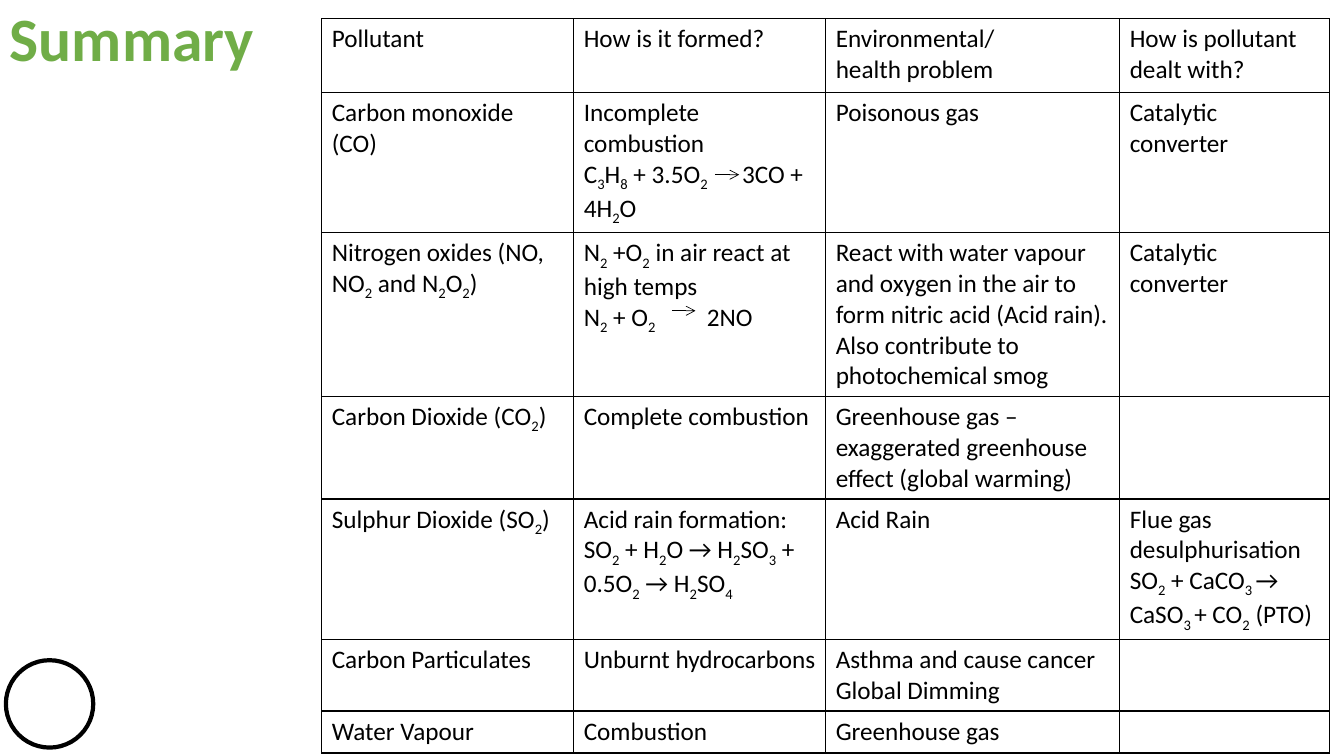
from dataclasses import dataclass

from lxml.etree import SubElement
from pptx import Presentation
from pptx.dml.color import RGBColor
from pptx.enum.shapes import MSO_CONNECTOR, MSO_SHAPE
from pptx.enum.text import MSO_ANCHOR
from pptx.oxml.ns import qn
from pptx.util import Emu, Inches, Pt

INK = {"black": "000000", "white": "FFFFFF", "green": "70AD47"}
FONT = "Calibri"
WIDE, HIGH = Inches(13.33), Inches(7.5)
COLS, ROWS = 160, 90
SPANS = (30, 30, 35, 25)
DEPTHS = (8.76, 16.7, 19.5, 12.15, 16.7, 8.55, 5)


@dataclass
class Box:
    left: float
    top: float
    width: float
    height: float

    def place(self) -> tuple:
        """Give the box as slide lengths."""
        return across(self.left), down(self.top), across(self.width), down(self.height)


@dataclass
class Line:
    text: str
    tab: float = 0


@dataclass
class Arrow:
    start: float
    end: float
    row: float


CELLS = (
    (("Pollutant",), ("How is it formed?",),
     ("Environmental/", "health problem"), ("How is pollutant dealt with?",)),
    (("Carbon monoxide (CO)",),
     ("Incomplete combustion", Line("C|3|H|8| + 3.5O|2|\t3CO + 4H|2|O", 18.85)),
     ("Poisonous gas",), ("Catalytic converter",)),
    (("Nitrogen oxides (NO, NO|2| and N|2|O|2|)",),
     ("N|2| +O|2| in air react at high temps", Line("N|2| + O|2|\t2NO", 14.65)),
     ("React with water vapour and oxygen in the air to form nitric acid "
      "(Acid rain). Also contribute to photochemical smog",),
     ("Catalytic converter",)),
    (("Carbon Dioxide (CO|2|)",), ("Complete combustion",),
     ("Greenhouse gas – exaggerated greenhouse effect (global warming)",), ()),
    (("Sulphur Dioxide (SO|2|)",),
     ("Acid rain formation: SO|2| + H|2|O → H|2|SO|3| + 0.5O|2| → H|2|SO|4|",),
     ("Acid Rain",),
     ("Flue gas desulphurisation", "SO|2| + CaCO|3 |→ CaSO|3 |+ CO|2| (PTO)")),
    (("Carbon Particulates",), ("Unburnt hydrocarbons",),
     ("Asthma and cause cancer", "Global Dimming"), ()),
    (("Water Vapour",), ("Combustion",), ("Greenhouse gas",), ()),
)
ARROWS = (Arrow(80, 82.8, 37), Arrow(85.1, 88, 20.8))


def across(cols: float) -> Emu:
    """Turn grid columns into a length."""
    return Emu(round(WIDE * cols / COLS))


def down(rows: float) -> Emu:
    """Turn grid rows into a length."""
    return Emu(round(HIGH * rows / ROWS))


def hue(name: str) -> RGBColor:
    """Look up a colour."""
    return RGBColor.from_string(INK[name])


def style(para, size: float, tint: str, bold: bool = False) -> None:
    """Set the font of a paragraph."""
    font = para.font
    font.name, font.size, font.bold = FONT, Pt(size), bold
    font.color.rgb = hue(tint)


def write(para, line: Line) -> None:
    """Write a line whose odd parts are subscripts."""
    if line.tab:
        tabs = SubElement(para._p.get_or_add_pPr(), qn("a:tabLst"))
        SubElement(tabs, qn("a:tab"), pos=str(across(line.tab)), algn="l")
    for spot, part in enumerate(line.text.split("|")):
        if part:
            run = para.add_run()
            run.text = part
            if spot % 2:
                run.font._element.set("baseline", "-25000")
    style(para, 18, "black")


def frame(cell) -> None:
    """Draw the cell borders and clear the fill."""
    props = cell._tc.get_or_add_tcPr()
    for side in "LRTB":
        edge = SubElement(props, qn(f"a:ln{side}"), w=str(Pt(1)))
        fill = SubElement(edge, qn("a:solidFill"))
        SubElement(fill, qn("a:srgbClr"), val=INK["black"])
    cell.fill.background()


def add_grid(slide, box: Box) -> None:
    """Build the table of pollutants."""
    table = slide.shapes.add_table(len(DEPTHS), len(SPANS), *box.place()).table
    table.first_row = table.horz_banding = False
    for col, span in zip(table.columns, SPANS):
        col.width = across(span)
    for row, depth, texts in zip(table.rows, DEPTHS, CELLS):
        row.height = down(depth)
        for cell, lines in zip(row.cells, texts):
            frame(cell)
            body = cell.text_frame
            style(body.paragraphs[0], 18, "black")
            for spot, line in enumerate(lines):
                para = body.add_paragraph() if spot else body.paragraphs[0]
                write(para, line if isinstance(line, Line) else Line(line))


def add_ring(slide, box: Box) -> None:
    """Draw the corner ring."""
    ring = slide.shapes.add_shape(MSO_SHAPE.OVAL, *box.place())
    ring.shadow.inherit = False
    ring.fill.solid()
    ring.fill.fore_color.rgb = hue("white")
    ring.line.color.rgb = hue("black")
    ring.line.width = Pt(3)


def add_arrow(slide, arrow: Arrow) -> None:
    """Draw a reaction arrow."""
    y = down(arrow.row)
    link = slide.shapes.add_connector(
        MSO_CONNECTOR.STRAIGHT, across(arrow.start), y, across(arrow.end), y)
    link.line.color.rgb = hue("black")
    link.line.width = Pt(0.5)
    SubElement(link.line._get_or_add_ln(), qn("a:tailEnd"), type="arrow")
    SubElement(link._element.spPr, qn("a:effectLst"))


def add_title(slide, box: Box, text: str) -> None:
    """Write the slide title."""
    body = slide.shapes.add_textbox(*box.place()).text_frame
    body.word_wrap = True
    body.vertical_anchor = MSO_ANCHOR.MIDDLE
    para = body.paragraphs[0]
    para.text = text
    para.line_spacing = 0.9
    style(para, 44, "green", True)


def main() -> None:
    """Build and save the slide."""
    deck = Presentation()
    deck.slide_width, deck.slide_height = WIDE, HIGH
    slide = deck.slides.add_slide(deck.slide_layouts[6])
    add_ring(slide, Box(0.7, 78.6, 10.4, 10.4))
    add_grid(slide, Box(38.3, 2.25, sum(SPANS), sum(DEPTHS)))
    for arrow in ARROWS:
        add_arrow(slide, arrow)
    add_title(slide, Box(0, 0, 149, 10), "Summary")
    deck.save("out.pptx")


if __name__ == "__main__":
    main()
